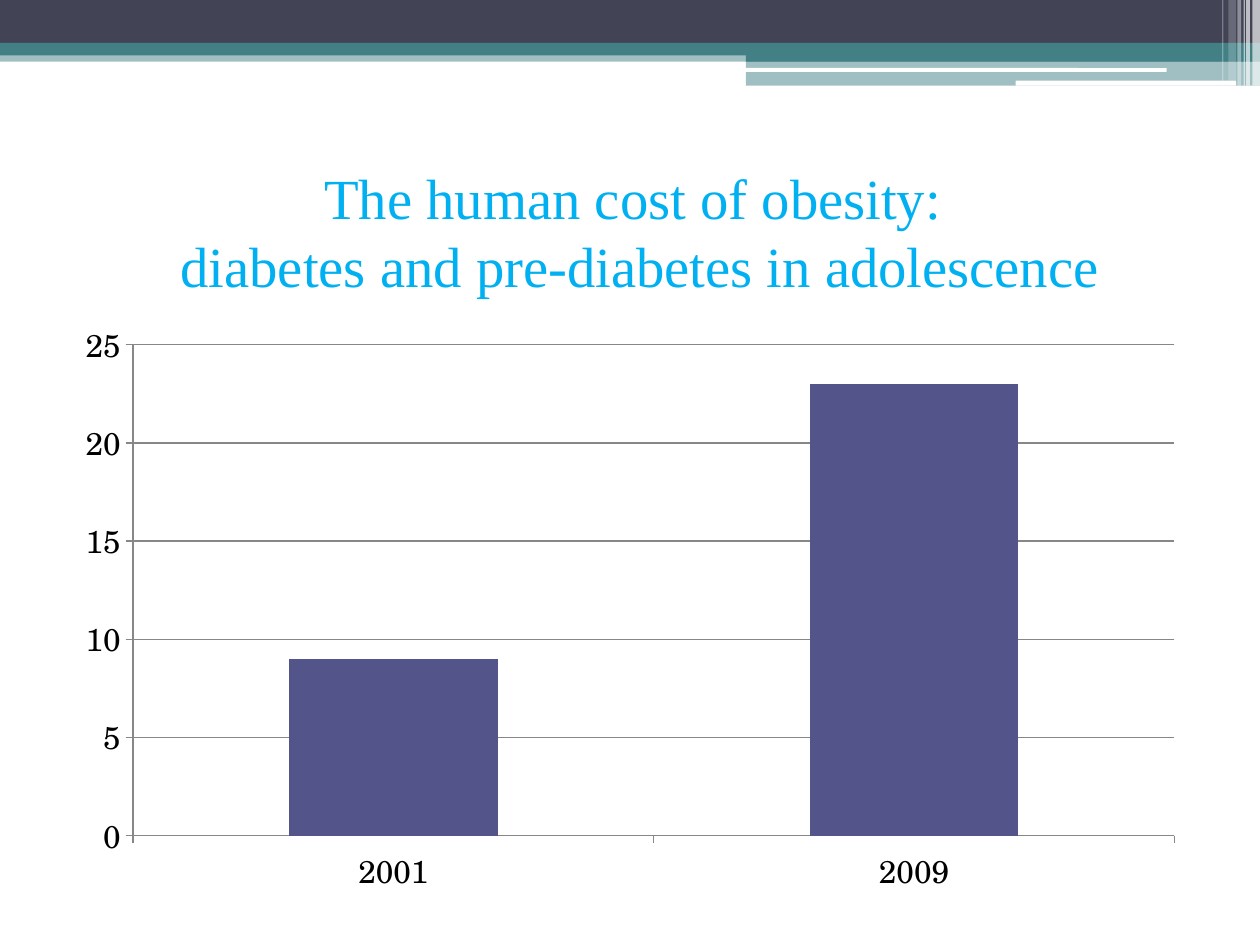
"""Build the slide on diabetes and pre-diabetes in adolescence."""
from typing import NamedTuple

from lxml.etree import SubElement
from pptx import Presentation
from pptx.chart.data import CategoryChartData
from pptx.dml.color import RGBColor
from pptx.enum.chart import XL_CHART_TYPE, XL_TICK_MARK
from pptx.enum.shapes import MSO_SHAPE
from pptx.enum.text import MSO_ANCHOR, MSO_AUTO_SIZE, PP_ALIGN
from pptx.oxml.ns import qn
from pptx.util import Emu, Pt

EMU_PER_PX = 9144
NAVY, TEAL, WHITE = "424456", "438086", "FFFFFF"
SKY, PURPLE, GREY, BLACK = "00B0F0", "53548A", "878787", "000000"


class Band(NamedTuple):
    """A filled bar of the header, with its opacity in percent."""

    left: int
    top: int
    width: int
    height: int
    color: str
    opacity: int = 100
    rounded: bool = False


HEADER = [
    Band(0, 40, 1000, 9, TEAL, 50),
    Band(0, 0, 1000, 34, NAVY),
    Band(0, 34, 1000, 10, TEAL),
    Band(592, 39, 408, 10, TEAL),
    Band(592, 48, 408, 20, TEAL, 50),
    Band(591, 54, 335, 3, WHITE, rounded=True),
    Band(806, 64, 175, 4, WHITE, rounded=True),
    Band(994, 0, 6, 68, WHITE, 65),
    Band(989, 0, 3, 68, WHITE, 65),
    Band(987, 0, 1, 68, WHITE, 60),
    Band(982, 0, 3, 68, WHITE, 40),
    Band(975, 0, 6, 64, WHITE, 20),
    Band(970, 0, 1, 64, WHITE, 30),
]


def px(length: int) -> Emu:
    """Turn px into EMU."""
    return Emu(length * EMU_PER_PX)


def rgb(color: str) -> RGBColor:
    """Turn a hex string into a colour."""
    return RGBColor.from_string(color)


def draw_band(slide, band: Band) -> None:
    """Draw one header bar."""
    preset = MSO_SHAPE.ROUNDED_RECTANGLE if band.rounded else MSO_SHAPE.RECTANGLE
    bar = slide.shapes.add_shape(
        preset, px(band.left), px(band.top), px(band.width), px(band.height)
    )
    bar.shadow.inherit = False
    bar.line.fill.background()
    bar.fill.solid()
    bar.fill.fore_color.rgb = rgb(band.color)
    if band.opacity < 100:
        tint = next(bar.element.spPr.iter(qn("a:srgbClr")))
        SubElement(tint, qn("a:alpha"), val=str(band.opacity * 1000))


def write_title(slide) -> None:
    """Place and format the title."""
    title = slide.shapes.title
    title.left, title.top, title.width, title.height = px(33), px(125), px(950), px(117)
    frame = title.text_frame
    frame.text = "The human cost of obesity: \vdiabetes and pre-diabetes in adolescence"
    frame.word_wrap = True
    frame.auto_size = MSO_AUTO_SIZE.NONE
    frame.vertical_anchor = MSO_ANCHOR.MIDDLE
    paragraph = frame.paragraphs[0]
    paragraph.alignment = PP_ALIGN.CENTER
    paragraph.font.name = "Times New Roman"
    paragraph.font.size = Pt(32.4)
    paragraph.font.color.rgb = rgb(SKY)


def draw_chart(slide) -> None:
    """Draw the column chart comparing both years."""
    rates = CategoryChartData()
    rates.categories = ["2001", "2009"]
    rates.add_series("Series 1", [9, 23])
    chart = slide.shapes.add_chart(
        XL_CHART_TYPE.COLUMN_CLUSTERED, px(50), px(246), px(900), px(473), rates
    ).chart
    chart.has_legend = False
    chart.has_title = False
    chart.font.name = "TeX Gyre Schola"
    chart.font.size = Pt(18)
    chart.font.color.rgb = rgb(BLACK)

    columns = chart.plots[0]
    columns.vary_by_categories = False
    columns.gap_width = 150
    fill = columns.series[0].format.fill
    fill.solid()
    fill.fore_color.rgb = rgb(PURPLE)

    scale = chart.value_axis
    scale.minimum_scale, scale.maximum_scale, scale.major_unit = 0, 25, 5
    scale.has_major_gridlines = True
    for axis in (chart.category_axis, scale):
        axis.major_tick_mark = XL_TICK_MARK.OUTSIDE
    for rule in (chart.category_axis, scale, scale.major_gridlines):
        rule.format.line.color.rgb = rgb(GREY)
        rule.format.line.width = Pt(0.75)


def main() -> None:
    """Build and save the slide."""
    deck = Presentation()
    deck.slide_width, deck.slide_height = px(1000), px(750)
    slide = deck.slides.add_slide(deck.slide_layouts[5])
    for band in HEADER:
        draw_band(slide, band)
    write_title(slide)
    draw_chart(slide)
    deck.save("out.pptx")


if __name__ == "__main__":
    main()
